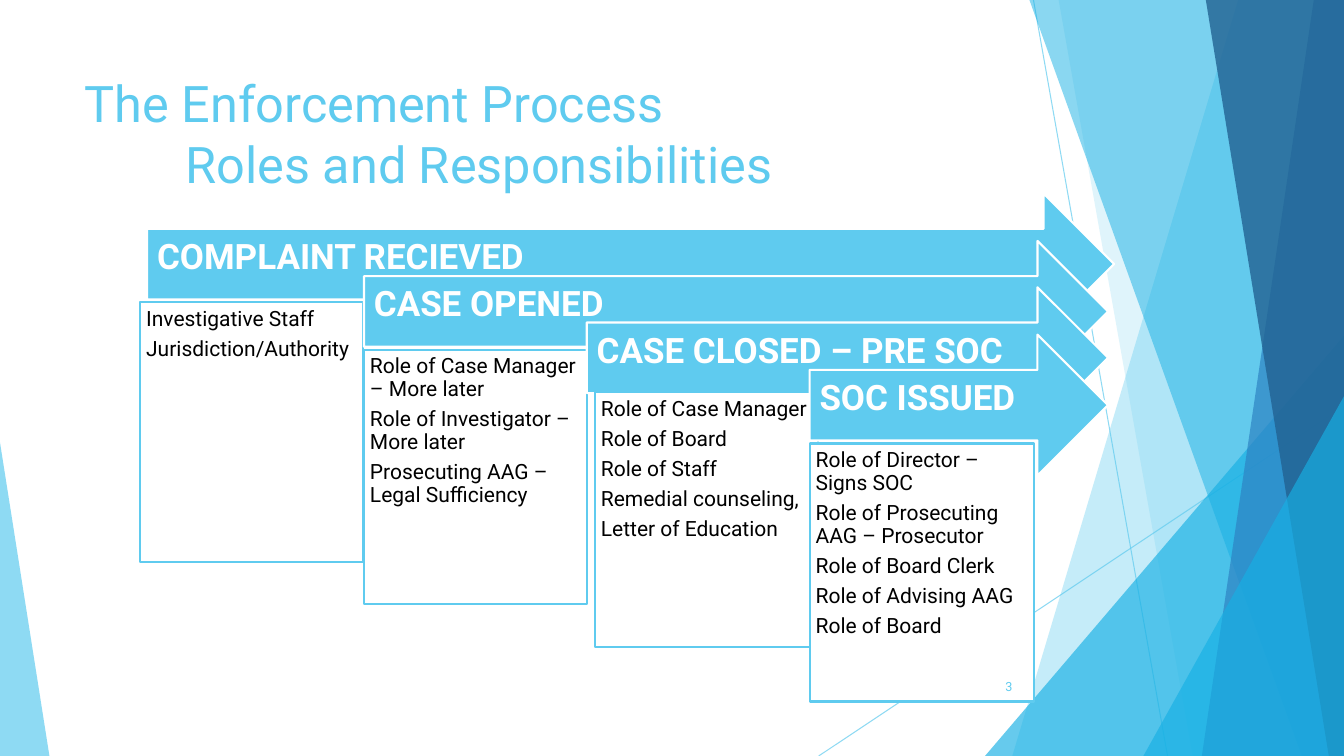
import pptx
import pptx.util
import pptx.dml.color
import pptx.enum.shapes
import pptx.enum.text
import pptx.oxml
import pptx.oxml.ns
import pptx.oxml.xmlchemy

Inches = pptx.util.Inches
Pt = pptx.util.Pt
MSO_SHAPE = pptx.enum.shapes.MSO_SHAPE
ALIGN = pptx.enum.text.PP_ALIGN
ANCHOR = pptx.enum.text.MSO_ANCHOR
qn = pptx.oxml.ns.qn
OxmlElement = pptx.oxml.xmlchemy.OxmlElement

FONT = "Roboto"
SKY, CYAN, BLUE, NAVY = "5FCBEF", "17B0E4", "2E83C3", "226292"
WHITE, BLACK = "FFFFFF", "000000"
W, H = 13.33, 7.5

STAGES = [
    dict(name="COMPLAINT RECIEVED", arrow=(1.46, 1.92, 9.59, 1.4),
         box=(1.39, 3, 2.21, 2.58),
         roles=["Investigative Staff", "Jurisdiction/Authority"]),
    dict(name="CASE OPENED", arrow=(3.61, 2.39, 7.38, 1.4),
         box=(3.61, 3.47, 2.21, 2.52),
         roles=["Role of Case Manager – More later",
                "Role of Investigator – More later",
                "Prosecuting AAG – Legal Sufficiency"]),
    dict(name="CASE CLOSED – PRE SOC", arrow=(5.82, 2.85, 5.17, 1.4),
         box=(5.9, 3.89, 2.21, 2.53),
         roles=["Role of Case Manager", "Role of Board", "Role of Staff",
                "Remedial counseling,", "Letter of Education"]),
    dict(name="SOC ISSUED", arrow=(8.03, 3.32, 2.96, 1.4),
         box=(8.03, 4.4, 2.23, 2.56),
         roles=["Role of Director – Signs SOC",
                "Role of Prosecuting AAG – Prosecutor",
                "Role of Board Clerk", "Role of Advising AAG",
                "Role of Board"]),
]


def paint(fmt, color, alpha=100):
    fmt.solid()
    fmt.fore_color.rgb = pptx.dml.color.RGBColor.from_string(color)
    if alpha < 100:
        a = OxmlElement("a:alpha")
        a.set("val", str(alpha * 1000))
        fmt._xPr.find(qn("a:solidFill"))[0].append(a)


def style(sp, fill, alpha=100, line=None):
    sp.shadow.inherit = False
    paint(sp.fill, fill, alpha)
    if line:
        paint(sp.line.fill, line)
        sp.line.width = Pt(1.5)
    else:
        sp.line.fill.background()


def put_text(sp, lines, size, color, bold=False, align=ALIGN.LEFT,
             anchor=ANCHOR.TOP, insets=(0.1, 0.05, 0.1, 0.05),
             spacing=1, after=0):
    tf = sp.text_frame
    tf.word_wrap = True
    tf.auto_size = pptx.enum.text.MSO_AUTO_SIZE.NONE
    tf.vertical_anchor = anchor
    (tf.margin_left, tf.margin_top,
     tf.margin_right, tf.margin_bottom) = [Inches(v) for v in insets]
    for i, line in enumerate(lines):
        p = tf.add_paragraph() if i else tf.paragraphs[0]
        p.text = line
        p.alignment = align
        p.line_spacing = spacing
        p.space_before = Pt(0)
        p.space_after = Pt(after)
        for r in p.runs:
            r.font.name = FONT
            r.font.size = Pt(size)
            r.font.bold = bold
            paint(r.font.fill, color)


def add_preset(s, kind, box):
    return s.shapes.add_shape(kind, *[Inches(v) for v in box])


def add_ray(s, start, end):
    c = s.shapes.add_connector(pptx.enum.shapes.MSO_CONNECTOR.STRAIGHT,
                               *[Inches(v) for v in start + end])
    paint(c.line.fill, SKY, 70)
    c.line.width = Pt(0.75)
    c._element.spPr.append(OxmlElement("a:effectLst"))


def add_band(s, top, bottom, color, alpha):
    fb = s.shapes.build_freeform(Inches(top), 0)
    fb.add_line_segments([(Inches(x), Inches(y)) for x, y in
                          [(W, 0), (W, H), (bottom, H)]], close=True)
    style(fb.convert_to_shape(), color, alpha)


def add_wedge(s, left, top, width, apex, color, alpha):
    sp = add_preset(s, MSO_SHAPE.ISOSCELES_TRIANGLE,
                    (left, top, width, H - top))
    sp.adjustments[0] = apex
    style(sp, color, alpha)


def add_backdrop(s):
    add_ray(s, (10.25, 0), (11.58, H))
    add_ray(s, (W, 4.03), (8.12, H))
    add_band(s, 12.28, 10.04, SKY, 36)
    add_band(s, 10.5, 11.83, SKY, 20)
    add_wedge(s, 9.77, 3.33, 3.56, 1, CYAN, 66)
    add_band(s, 10.21, 12.91, CYAN, 50)
    add_band(s, 13.03, 11.92, BLUE, 70)
    add_band(s, 11.96, 13.18, NAVY, 80)
    add_wedge(s, 11.34, 3.93, 1.99, 1, CYAN, 66)
    add_wedge(s, 0, 4.39, 0.49, 0, SKY, 70)


def add_title(s, box):
    sp = s.shapes.title
    sp.left, sp.top, sp.width, sp.height = [Inches(v) for v in box]
    put_text(sp, ["The Enforcement Process\v\t\tRoles and Responsibilities"],
             36, SKY)


def add_stage(s, name, arrow, box, roles):
    sp = add_preset(s, MSO_SHAPE.RIGHT_ARROW, arrow)
    style(sp, SKY, line=WHITE)
    put_text(sp, [name], 25, WHITE, bold=True, anchor=ANCHOR.MIDDLE,
             insets=(0.1, 0.1, 0.1, 0.22), spacing=0.9)
    sp = add_preset(s, MSO_SHAPE.RECTANGLE, box)
    style(sp, WHITE, line=SKY)
    put_text(sp, roles, 15, BLACK, insets=(0.06,) * 4,
             spacing=0.9, after=5.25)


def add_page_number(s, box):
    sp = s.shapes.add_textbox(*[Inches(v) for v in box])
    put_text(sp, ["3"], 9, SKY, align=ALIGN.RIGHT, anchor=ANCHOR.MIDDLE)


def main():
    prs = pptx.Presentation()
    prs.slide_width, prs.slide_height = Inches(W), Inches(H)
    s = prs.slides.add_slide(prs.slide_layouts[5])
    add_backdrop(s)
    add_title(s, (0.74, 0.67, 9.4, 1.44))
    for stage in STAGES:
        add_stage(s, **stage)
    add_page_number(s, (9.39, 6.61, 0.75, 0.4))
    prs.save("out.pptx")


if __name__ == "__main__":
    main()
